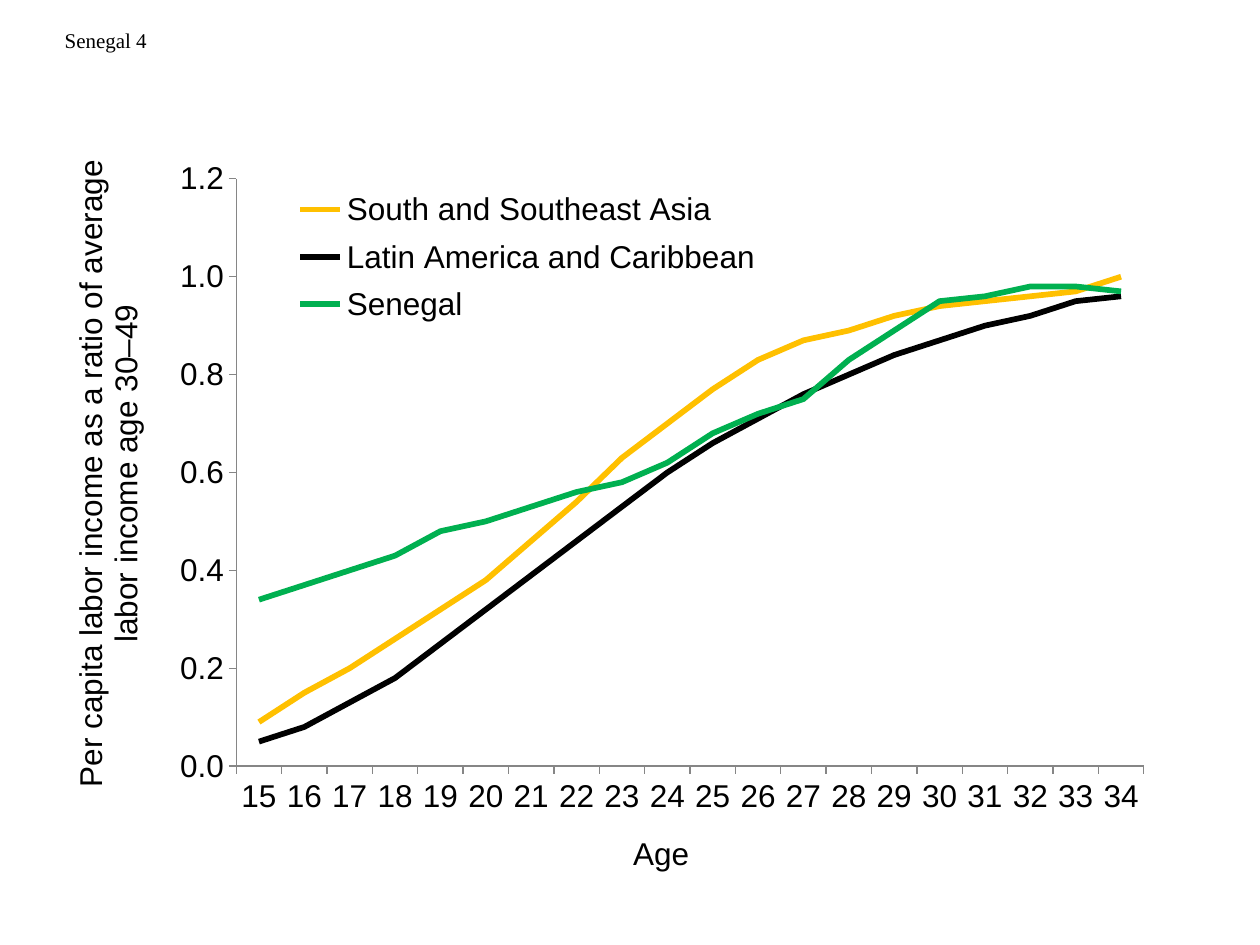
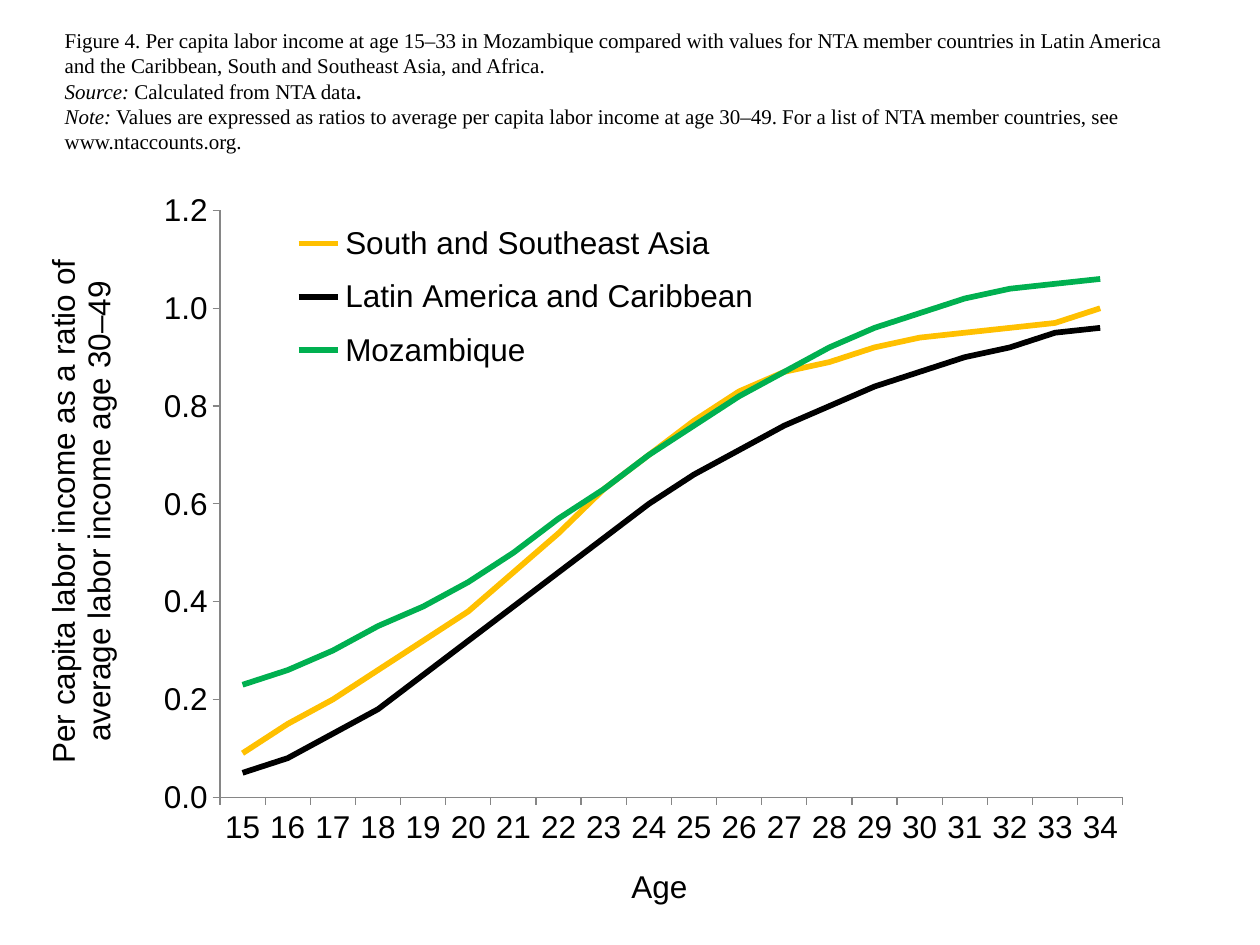
from lxml import etree
from pptx import Presentation
from pptx.chart.data import CategoryChartData
from pptx.dml.color import RGBColor
from pptx.enum.chart import XL_CHART_TYPE, XL_LEGEND_POSITION, XL_MARKER_STYLE, XL_TICK_MARK
from pptx.enum.text import MSO_ANCHOR, MSO_AUTO_SIZE, PP_ALIGN
from pptx.oxml.ns import qn
from pptx.util import Cm, Pt

LINE = XL_CHART_TYPE.LINE
LEGEND_TOP = XL_LEGEND_POSITION.TOP
NO_MARKER = XL_MARKER_STYLE.NONE
TICK_OUTSIDE, TICK_NONE = XL_TICK_MARK.OUTSIDE, XL_TICK_MARK.NONE
ANCHOR_TOP = MSO_ANCHOR.TOP
NO_AUTOFIT = MSO_AUTO_SIZE.NONE
LEFT = PP_ALIGN.LEFT

COLORS = {"text": "000000", "axis": "868686", "asia": "FFC000",
          "latin": "000000", "country": "00B050"}
CAPTION_FONT, CHART_FONT = "Times New Roman", "Arial"
CAPTION_SIZE, CHART_SIZE, SERIES_WIDTH = 12, 18, 3.25

AGES = range(15, 35)
AGE_TITLE = "Age"
INCOME_TITLE = "Per capita labor income as a ratio of average labor income age 30–49"
REGIONS = [
    ("South and Southeast Asia", "asia",
     [0.09, 0.15, 0.2, 0.26, 0.32, 0.38, 0.46, 0.54, 0.63, 0.7,
      0.77, 0.83, 0.87, 0.89, 0.92, 0.94, 0.95, 0.96, 0.97, 1]),
    ("Latin America and Caribbean ", "latin",
     [0.05, 0.08, 0.13, 0.18, 0.25, 0.32, 0.39, 0.46, 0.53, 0.6,
      0.66, 0.71, 0.76, 0.8, 0.84, 0.87, 0.9, 0.92, 0.95, 0.96]),
]

FIGURES = [
    {
        "caption": [[("Senegal 4", {})]],
        "caption_box": (1.05, 0.43, 4.88, 1.27),
        "country": ("Senegal", "country",
                    [0.34, 0.37, 0.4, 0.43, 0.48, 0.5, 0.53, 0.56, 0.58, 0.62,
                     0.68, 0.72, 0.75, 0.83, 0.89, 0.95, 0.96, 0.98, 0.98, 0.97]),
        "chart_box": (0.53, 1.47, 24.33, 16.31),
        "plot": (17.4, 13.1, 75.2, 72.6),
        "legend": (22.4, 13.2, 39, 19.1),
        "age_title": (49.8, 93.2),
        "income_title": (3.1, 10.1),
    },
    {
        "caption": [
            [("Figure 4. Per capita labor income at age 15–33 in Mozambique compared "
              "with values for NTA member countries in Latin America and the "
              "Caribbean, South and Southeast Asia, and Africa. ", {})],
            [("Source:", {"italic": True}), (" Calculated from NTA data", {}),
             (".", {"bold": True})],
            [("Note:", {"italic": True}),
             (" Values are expressed as ratios to average per capita labor income at "
              "age 30–49. For a list of NTA member countries, see "
              "www.ntaccounts.org.", {})],
        ],
        "caption_box": (1.05, 0.43, 23.06, 3.38),
        "country": ("Mozambique", "country",
                    [0.23, 0.26, 0.3, 0.35, 0.39, 0.44, 0.5, 0.57, 0.63, 0.7,
                     0.76, 0.82, 0.87, 0.92, 0.96, 0.99, 1.02, 1.04, 1.05, 1.06]),
        "chart_box": (0.43, 3.18, 23.7, 15.88),
        "plot": (16.9, 6.7, 76.8, 74.5),
        "legend": (23.3, 6.4, 40, 22.5),
        "age_title": (51.4, 89.2),
        "income_title": (1.3, 12.2),
    },
]


def rgb(name):
    return RGBColor.from_string(COLORS[name])


def style_font(font, face, size, bold=False, italic=False):
    font.name, font.size = face, Pt(size)
    font.bold, font.italic = bold, italic
    font.color.rgb = rgb("text")


def add_text(paragraph, text, face=CAPTION_FONT, size=CAPTION_SIZE, **emphasis):
    run = paragraph.add_run()
    run.text = text
    style_font(run.font, face, size, **emphasis)


def place(element, percents, index=1, inner=False):
    for old in element.findall(qn("c:layout")):
        element.remove(old)
    layout = etree.Element(qn("c:layout"))
    manual = etree.SubElement(layout, qn("c:manualLayout"))
    settings = [("layoutTarget", "inner")] if inner else []
    settings += [("xMode", "edge"), ("yMode", "edge")]
    settings += [(key, f"{part / 100:.3f}") for key, part in zip("xywh", percents)]
    for key, setting in settings:
        etree.SubElement(manual, qn(f"c:{key}")).set("val", setting)
    element.insert(index, layout)


def style_axis(axis, title, position, rotation):
    axis.has_major_gridlines = False
    axis.major_tick_mark, axis.minor_tick_mark = TICK_OUTSIDE, TICK_NONE
    axis.format.line.color.rgb = rgb("axis")
    axis.format.line.width = Pt(0.75)
    style_font(axis.tick_labels.font, CHART_FONT, CHART_SIZE)
    frame = axis.axis_title.text_frame
    add_text(frame.paragraphs[0], title, face=CHART_FONT, size=CHART_SIZE)
    body = frame._txBody.find(qn("a:bodyPr"))
    body.set("rot", str(rotation * 60000))
    body.set("vert", "horz")
    place(axis.axis_title._element, position)


def add_caption(slide, lines, box):
    caption = slide.shapes.title
    caption.left, caption.top, caption.width, caption.height = map(Cm, box)
    frame = caption.text_frame
    frame.word_wrap, frame.auto_size = True, NO_AUTOFIT
    frame.vertical_anchor = ANCHOR_TOP
    paragraph = frame.paragraphs[0]
    paragraph.alignment = LEFT
    for number, line in enumerate(lines):
        if number:
            paragraph.add_line_break()
        for text, emphasis in line:
            add_text(paragraph, text, **emphasis)


def add_income_chart(slide, figure):
    profiles = REGIONS + [figure["country"]]
    data = CategoryChartData(number_format="0.00")
    data.categories = [str(age) for age in AGES]
    for name, _, ratios in profiles:
        data.add_series(name, ratios)
    chart = slide.shapes.add_chart(LINE, *map(Cm, figure["chart_box"]), data).chart
    chart.has_title = False
    style_font(chart.font, CHART_FONT, CHART_SIZE)

    plot = chart.plots[0]
    plot.vary_by_categories = False
    for series, (_, color, _) in zip(plot.series, profiles):
        series.smooth = False
        series.marker.style = NO_MARKER
        series.format.line.color.rgb = rgb(color)
        series.format.line.width = Pt(SERIES_WIDTH)

    style_axis(chart.category_axis, AGE_TITLE, figure["age_title"], 0)
    income_axis = chart.value_axis
    style_axis(income_axis, INCOME_TITLE, figure["income_title"], -90)
    income_axis.minimum_scale, income_axis.maximum_scale = 0, 1.2
    income_axis.major_unit = 0.2
    income_axis.tick_labels.number_format = "0.0"
    income_axis.tick_labels.number_format_is_linked = False

    chart.has_legend = True
    chart.legend.position = LEGEND_TOP
    chart.legend.include_in_layout = False
    style_font(chart.legend.font, CHART_FONT, CHART_SIZE)
    place(chart.legend._element, figure["legend"])
    place(income_axis._element.getparent(), figure["plot"], index=0, inner=True)


def main():
    deck = Presentation()
    deck.slide_width, deck.slide_height = Cm(25.4), Cm(19.05)
    title_only = deck.slide_layouts[5]
    for figure in FIGURES:
        slide = deck.slides.add_slide(title_only)
        add_caption(slide, figure["caption"], figure["caption_box"])
        add_income_chart(slide, figure)
    deck.save("out.pptx")


if __name__ == "__main__":
    main()
